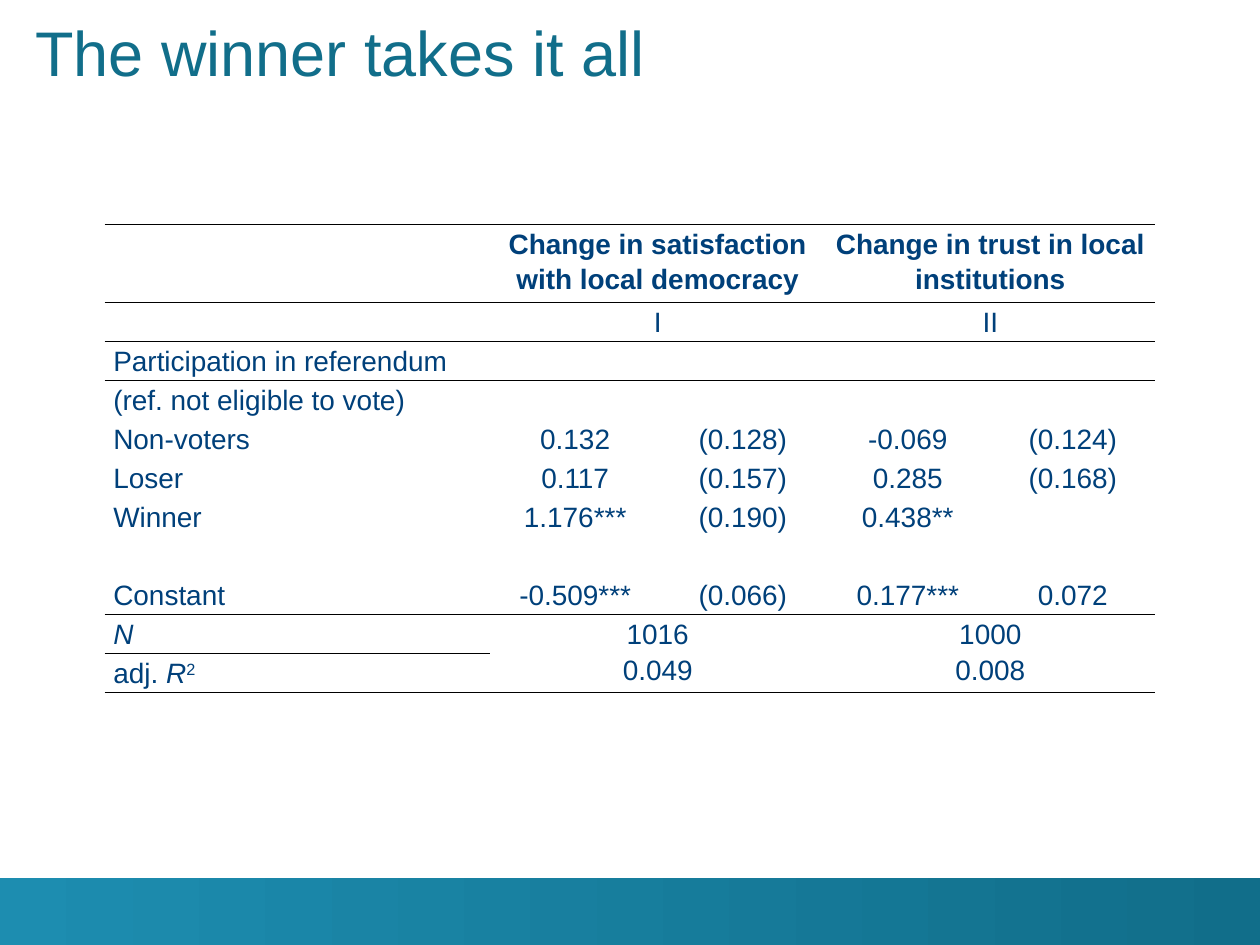
from dataclasses import dataclass

from lxml import etree
from pptx import Presentation, util as u
from pptx.dml import color
from pptx.enum import shapes, text
from pptx.oxml import ns

COLORS = {"title": "116E8A", "table": "00407A", "rule": "000000",
          "band_start": "1D8DB0", "band_end": "116E8A"}
FONT = "Arial"
COLUMN_WIDTHS = [3.06, 1.35, 1.31, 1.31, 1.31]
ROW_HEIGHTS = [0.62] + [0.31] * 10
RULES = {0, 1, 2, 9, 11}  # row boundaries that carry a horizontal line
NO_STYLE_NO_GRID = "{2D5ABB26-0587-4C30-8999-92F81FD0307C}"


@dataclass
class Span:
    row: int
    column: int
    height: int = 1
    width: int = 2


SPANS = [Span(row, column, height)
         for row, height in ((0, 1), (1, 1), (9, 2)) for column in (1, 3)]

RESULTS = [
    ["", "Change in satisfaction with local democracy", "",
     "Change in trust in local institutions", ""],
    ["", "I", "", "II", ""],
    ["Participation in referendum", "", "", "", ""],
    ["(ref. not eligible to vote)", "", "", "", ""],
    ["Non-voters", "0.132", "(0.128)", "-0.069", "(0.124)"],
    ["Loser", "0.117", "(0.157)", "0.285", "(0.168)"],
    ["Winner", "1.176***", "(0.190)", "0.438**", ""],
    ["", "", "", "", ""],
    ["Constant", "-0.509***", "(0.066)", "0.177***", "0.072"],
    ["N", "1016\n0.049", "", "1000\n0.008", ""],
    ["adj. ", "", "", "", ""],
]


def rgb(name: str) -> color.RGBColor:
    return color.RGBColor.from_string(COLORS[name])


def style_font(font, size: float, color_name: str) -> None:
    font.name = FONT
    font.size = u.Pt(size)
    font.color.rgb = rgb(color_name)


def add_footer_band(slide) -> None:
    band = slide.shapes.add_shape(shapes.MSO_SHAPE.RECTANGLE, u.Inches(0), u.Inches(6.97),
                                  u.Inches(10), u.Inches(0.53))
    band.shadow.inherit = False
    band.line.fill.background()
    band.fill.gradient()
    band.fill.gradient_angle = 0
    for stop, name in zip(band.fill.gradient_stops, ("band_start", "band_end")):
        stop.color.rgb = rgb(name)


def add_title(slide, wording: str) -> None:
    title = slide.shapes.add_textbox(u.Inches(0.28), u.Inches(-0.27),
                                     u.Inches(9.11), u.Inches(0.98))
    frame = title.text_frame
    frame.word_wrap = True
    frame.vertical_anchor = text.MSO_ANCHOR.BOTTOM
    frame.margin_left = frame.margin_right = frame.margin_top = frame.margin_bottom = 0
    frame.text = wording
    style_font(frame.paragraphs[0].runs[0].font, 36, "title")


def add_rule(cell, side: str) -> None:
    """Draw a cell border; side is lnT or lnB."""
    line = etree.SubElement(cell._tc.get_or_add_tcPr(), ns.qn(f"a:{side}"), w=str(u.Pt(1)))
    fill = etree.SubElement(line, ns.qn("a:solidFill"))
    etree.SubElement(fill, ns.qn("a:srgbClr"), val=COLORS["rule"])


def format_cell(cell, row: int, column: int) -> None:
    if row in RULES:
        add_rule(cell, "lnT")
    if row + cell.span_height in RULES:
        add_rule(cell, "lnB")
    cell.fill.background()
    cell.margin_left = cell.margin_right = u.Inches(0.07)
    cell.margin_top = cell.margin_bottom = 0
    for paragraph in cell.text_frame.paragraphs:
        paragraph.line_spacing = 1.15
        paragraph.alignment = text.PP_ALIGN.CENTER if column else text.PP_ALIGN.LEFT
        style_font(paragraph.font, 16, "table")
        for run in paragraph.runs:
            style_font(run.font, 16, "table")
            run.font.bold = row == 0


def add_results_table(slide) -> None:
    table = slide.shapes.add_table(len(ROW_HEIGHTS), len(COLUMN_WIDTHS), u.Inches(0.83),
                                   u.Inches(1.78), u.Inches(sum(COLUMN_WIDTHS)),
                                   u.Inches(sum(ROW_HEIGHTS))).table
    table.first_row = table.horz_banding = False
    table._tbl.tblPr.find(ns.qn("a:tableStyleId")).text = NO_STYLE_NO_GRID
    for column, width in zip(table.columns, COLUMN_WIDTHS):
        column.width = u.Inches(width)
    for row, height in zip(table.rows, ROW_HEIGHTS):
        row.height = u.Inches(height)
    for span in SPANS:
        table.cell(span.row, span.column).merge(
            table.cell(span.row + span.height - 1, span.column + span.width - 1))

    for row, entries in enumerate(RESULTS):
        for column, entry in enumerate(entries):
            cell = table.cell(row, column)
            cell.text = entry
            if entry == "adj. ":
                for symbol in ("R", "2"):
                    cell.text_frame.paragraphs[0].add_run().text = symbol
            format_cell(cell, row, column)

    sample_size = table.cell(9, 0).text_frame.paragraphs[0].runs[0]
    _, r_symbol, exponent = table.cell(10, 0).text_frame.paragraphs[0].runs
    sample_size.font.italic = r_symbol.font.italic = True
    exponent.font._element.set("baseline", "30000")


def main() -> None:
    deck = Presentation()
    deck.slide_width, deck.slide_height = u.Inches(10), u.Inches(7.5)
    slide = deck.slides.add_slide(deck.slide_layouts[6])
    add_footer_band(slide)
    add_title(slide, "The winner takes it all")
    add_results_table(slide)
    deck.save("out.pptx")


if __name__ == "__main__":
    main()
